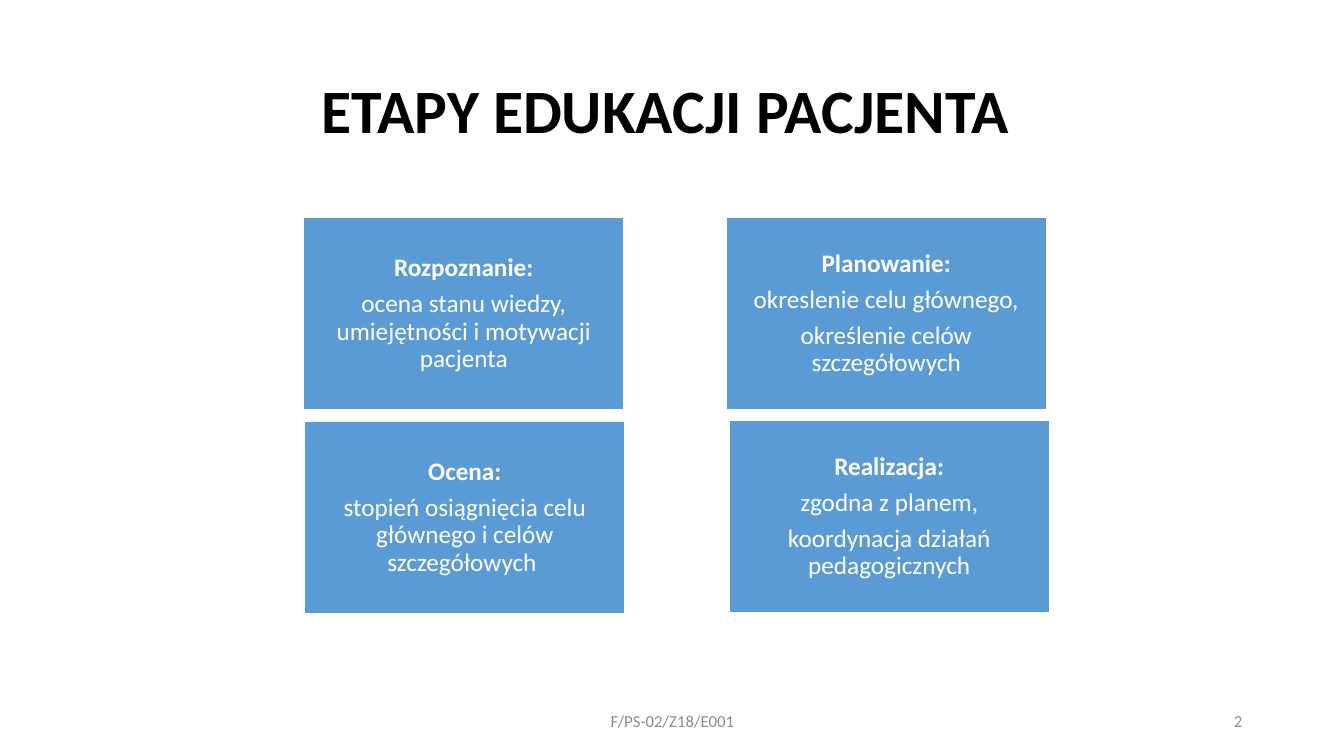
from pptx import Presentation
from pptx.dml.color import RGBColor
from pptx.enum.shapes import MSO_SHAPE as Shape
from pptx.enum.text import MSO_ANCHOR as Anchor, PP_ALIGN as Align
from pptx.util import Inches, Pt

BLACK = RGBColor(0x00, 0x00, 0x00)
WHITE = RGBColor(0xFF, 0xFF, 0xFF)
BLUE = RGBColor(0x5B, 0x9B, 0xD5)
GREY = RGBColor(0x8C, 0x8C, 0x8C)

TITLE = {"size": Pt(44), "bold": True}
STAGE_HEAD = {"size": Pt(18), "bold": True}
STAGE_BODY = {"size": Pt(18), "bold": False}
FOOTER = {"size": Pt(12), "bold": False}
STAGE_PARA = {"line_spacing": 0.9, "space_after": Pt(6.3)}

STAGE_SIZE = (3.18, 1.91)
STAGES = [
    (3.01, 2.16, ["Rozpoznanie:", "ocena stanu wiedzy, umiejętności i motywacji pacjenta"]),
    (7.2, 2.16, ["Planowanie:", "okreslenie celu głównego,", "określenie celów szczegółowych"]),
    (7.23, 4.17, ["Realizacja:", "zgodna z planem,", "koordynacja działań pedagogicznych"]),
    (3.02, 4.18, ["Ocena:", "stopień osiągnięcia celu głównego i celów szczegółowych "]),
]


def set_all(target, values):
    for name, value in values.items():
        setattr(target, name, value)


def write_para(para, text, color, font, layout):
    set_all(para, layout)
    span = para.add_run()
    span.text = text
    set_all(span.font, {"name": "Calibri", **font})
    span.font.color.rgb = color


def add_label(page, place, text, color, font, layout):
    box = page.shapes.add_textbox(*map(Inches, place))
    set_all(box.text_frame, {"word_wrap": True, "vertical_anchor": Anchor.MIDDLE})
    write_para(box.text_frame.paragraphs[0], text, color, font, layout)


def add_stage(page, left, top, lines):
    box = page.shapes.add_shape(Shape.RECTANGLE, *map(Inches, (left, top, *STAGE_SIZE)))
    box.shadow.inherit = False
    box.fill.solid()
    box.fill.fore_color.rgb = BLUE
    box.line.color.rgb = WHITE
    box.line.width = Pt(1)
    frame = box.text_frame
    set_all(frame, {"word_wrap": True, "vertical_anchor": Anchor.MIDDLE})
    for side in ("left", "top", "right", "bottom"):
        setattr(frame, f"margin_{side}", Inches(0.07))
    for index, line in enumerate(lines):
        para = frame.add_paragraph() if index else frame.paragraphs[0]
        font = STAGE_BODY if index else STAGE_HEAD
        write_para(para, line, WHITE, font, {"alignment": Align.CENTER, **STAGE_PARA})


def main():
    deck = Presentation()
    set_all(deck, {"slide_width": Inches(13.33), "slide_height": Inches(7.5)})
    page = deck.slides.add_slide(deck.slide_layouts[6])
    add_label(page, (0.92, 0.4, 11.5, 1.45), "ETAPY EDUKACJI PACJENTA ", BLACK, TITLE,
              {"alignment": Align.CENTER, "line_spacing": 0.9})
    for left, top, lines in STAGES:
        add_stage(page, left, top, lines)
    add_label(page, (4.42, 6.95, 4.5, 0.4), "F/PS-02/Z18/E001", GREY, FOOTER,
              {"alignment": Align.CENTER})
    add_label(page, (9.42, 6.95, 3, 0.4), "2", GREY, FOOTER, {"alignment": Align.RIGHT})
    deck.save("out.pptx")


if __name__ == "__main__":
    main()
